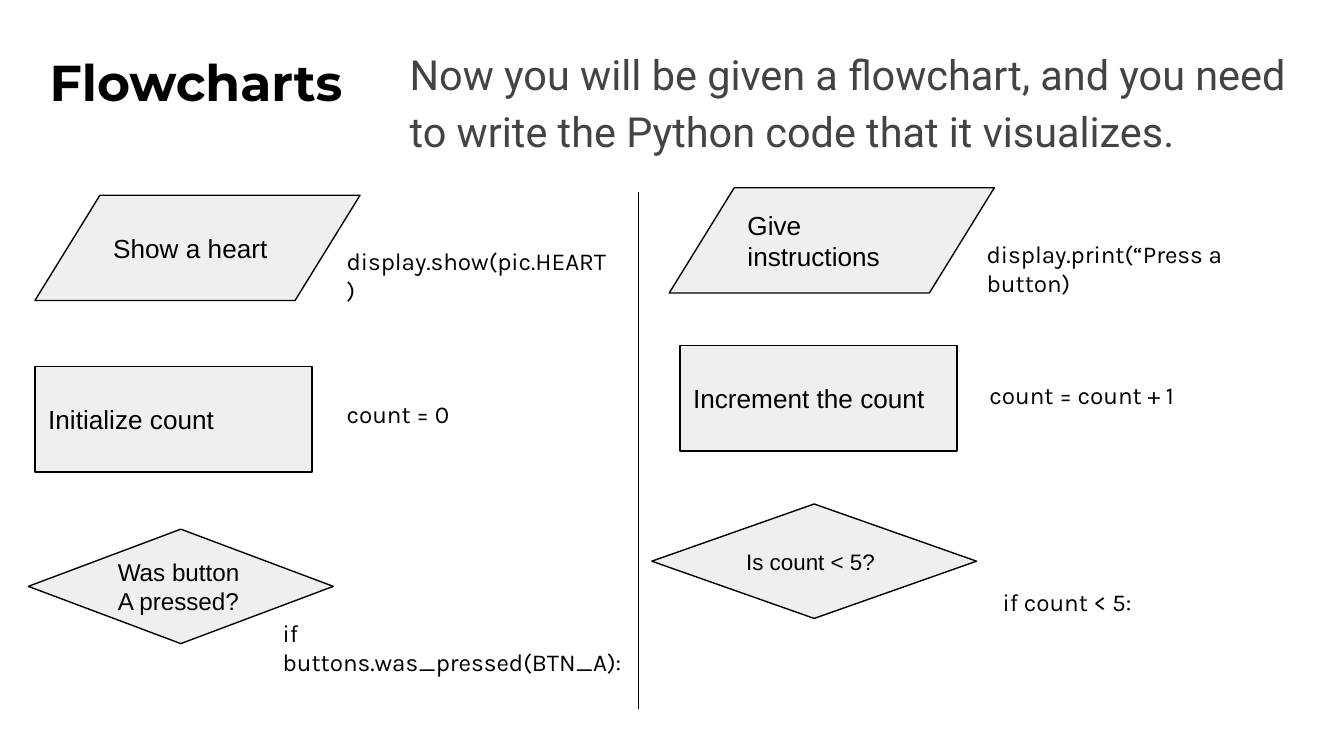
from dataclasses import dataclass

from lxml import etree
from pptx import Presentation
from pptx.dml.color import RGBColor
from pptx.enum.shapes import MSO_CONNECTOR, MSO_SHAPE
from pptx.enum.text import MSO_ANCHOR, PP_ALIGN
from pptx.oxml.ns import qn
from pptx.util import Pt

INPUT_OUTPUT = MSO_SHAPE.FLOWCHART_DATA
PROCESS = MSO_SHAPE.FLOWCHART_PROCESS
DECISION = MSO_SHAPE.FLOWCHART_DECISION
STRAIGHT = MSO_CONNECTOR.STRAIGHT
TOP, MIDDLE = MSO_ANCHOR.TOP, MSO_ANCHOR.MIDDLE
LEFT = PP_ALIGN.LEFT

COLORS = {"ink": "000000", "body": "434343", "step": "EFEFEF"}
INSET = 7.2
LINE_WIDTH = 0.75
CODE_HEIGHT = 24


@dataclass
class Style:
    font: str
    size: float
    color: str = "ink"
    bold: bool = False


@dataclass
class Step:
    kind: int
    x: float
    y: float
    w: float
    h: float
    text: str
    size: float = 14


@dataclass
class Code:
    x: float
    y: float
    w: float
    text: str


TITLE = Style("Montserrat", 27, bold=True)
BODY = Style("Roboto", 22.2, "body")
CODE = Style("Karla", 13)

STEPS = [
    # Left column
    Step(INPUT_OUTPUT, 18.7, 104.6, 174.2, 56.4, "Show a heart"),
    Step(PROCESS, 18.7, 196.4, 148.4, 56.4, "Initialize count"),
    Step(DECISION, 15.2, 283.5, 163.4, 61.3, "Was button A pressed?", 13),
    # Right column
    Step(INPUT_OUTPUT, 358.5, 100.6, 174.2, 56.4, "Give instructions"),
    Step(PROCESS, 364.2, 185.2, 148.4, 56.4, "Increment the count"),
    Step(DECISION, 349.2, 270, 174, 61.3, "Is count < 5?", 12),
]

CODES = [
    # Left column
    Code(178.6, 124.6, 156.2, "display.show(pic.HEART)"),
    Code(178.6, 206.6, 156.2, "count = 0"),
    Code(144.3, 324, 198, "if buttons.was_pressed(BTN_A):"),
    # Right column
    Code(521.5, 121, 178.6, "display.print(“Press a button)"),
    Code(523, 196.6, 156.2, "count = count + 1"),
    Code(530, 307.6, 198, "if count < 5:"),
]


def rgb(name: str) -> RGBColor:
    return RGBColor.from_string(COLORS[name])


def write(s, text: str, style: Style, anchor=TOP):
    """Fill a shape or text box with one left-aligned paragraph."""
    tf = s.text_frame
    frame_format = {"word_wrap": True, "vertical_anchor": anchor}
    for side in ("left", "top", "right", "bottom"):
        frame_format[f"margin_{side}"] = Pt(INSET)
    for name, value in frame_format.items():
        setattr(tf, name, value)
    p = tf.paragraphs[0]
    p.alignment = LEFT
    r = p.add_run()
    r.text = text
    font_format = {"name": style.font, "size": Pt(style.size), "bold": style.bold}
    for name, value in font_format.items():
        setattr(r.font, name, value)
    r.font.color.rgb = rgb(style.color)
    return p


def add_text(slide, x: float, y: float, w: float, h: float, text: str, style: Style):
    s = slide.shapes.add_textbox(Pt(x), Pt(y), Pt(w), Pt(h))
    return write(s, text, style)


def add_step(slide, step: Step) -> None:
    s = slide.shapes.add_shape(step.kind, Pt(step.x), Pt(step.y), Pt(step.w), Pt(step.h))
    s.shadow.inherit = False
    s.fill.solid()
    s.fill.fore_color.rgb = rgb("step")
    s.line.color.rgb = rgb("ink")
    s.line.width = Pt(LINE_WIDTH)
    write(s, step.text, Style("Arial", step.size), MIDDLE)


def add_divider(slide, x: float, top: float, bottom: float) -> None:
    line = slide.shapes.add_connector(STRAIGHT, Pt(x), Pt(top), Pt(x), Pt(bottom))
    line.line.color.rgb = rgb("ink")
    line.line.width = Pt(LINE_WIDTH)
    etree.SubElement(line._element.spPr, qn("a:effectLst"))


def main() -> None:
    prs = Presentation()
    prs.slide_width, prs.slide_height = Pt(720), Pt(405)
    slide = prs.slides.add_slide(prs.slide_layouts[6])

    # Heading and task
    add_text(slide, 19.6, 20.2, 208.8, 49, "Flowcharts", TITLE)
    task = ("Now you will be given a flowchart, and you need "
            "to write the Python code that it visualizes.")
    p = add_text(slide, 212.4, 15.1, 488.2, 85.7, task, BODY)
    p.line_spacing = 1.15
    p.space_after = Pt(12)

    # Flowchart steps, column divider and matching code
    for step in STEPS:
        add_step(slide, step)
    add_divider(slide, 342, 103, 379.6)
    for code in CODES:
        add_text(slide, code.x, code.y, code.w, CODE_HEIGHT, code.text, CODE)

    prs.save("out.pptx")


if __name__ == "__main__":
    main()
